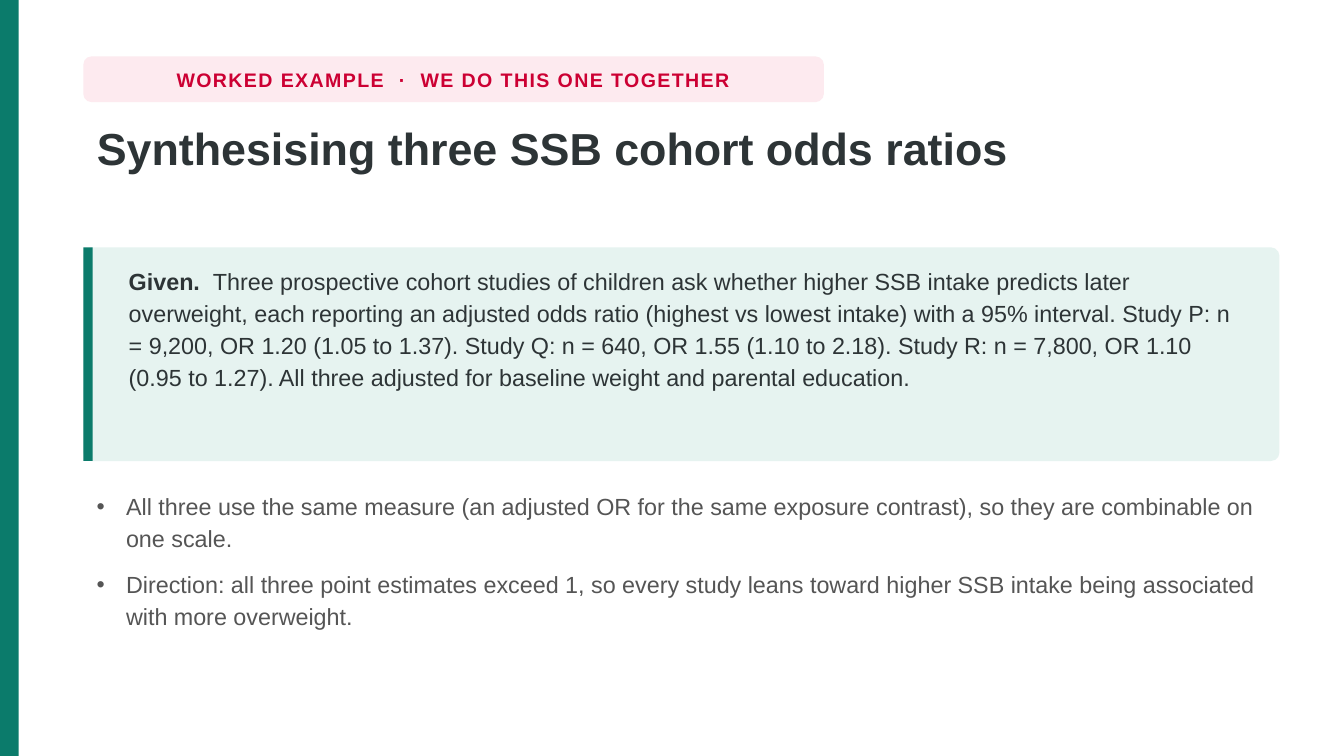
from dataclasses import dataclass

from lxml import etree
from pptx import Presentation
from pptx.dml.color import RGBColor
from pptx.enum.shapes import MSO_SHAPE as Shape
from pptx.enum.text import MSO_ANCHOR as Anchor, MSO_AUTO_SIZE as AutoSize, PP_ALIGN as Align
from pptx.oxml.ns import qn
from pptx.util import Inches, Pt


@dataclass(frozen=True)
class Theme:
    font: str = "Arial"
    green: str = "0B7B6B"
    mint: str = "E6F3F0"
    pink: str = "FDEAEF"
    red: str = "CC0033"
    ink: str = "2D3436"
    grey: str = "555555"
    label_size: float = 10.5
    title_size: float = 24
    body_size: float = 12.5


theme = Theme()
prs = Presentation()
prs.slide_width = Inches(10)
prs.slide_height = prs.slide_width * 9 // 16
slide = prs.slides.add_slide(prs.slide_layouts[5])
left, width = Inches(0.62), Inches(8.9)
panel_top, panel_height = Inches(1.84), Inches(1.59)


def add_block(kind, x, y, w, h, color, radius=None):
    block = slide.shapes.add_shape(kind, x, y, w, h)
    block.shadow.inherit = False
    block.fill.solid()
    block.fill.fore_color.rgb = RGBColor.from_string(color)
    block.line.fill.background()
    if radius is not None:
        block.adjustments[0] = radius
    return block


def style(paragraph, size, color, bold=False, spacing=1.0, align=Align.LEFT):
    paragraph.alignment = align
    paragraph.line_spacing = spacing
    for run in paragraph.runs:
        run.font.name = theme.font
        run.font.size = Pt(size)
        run.font.bold = bold
        run.font.color.rgb = RGBColor.from_string(color)


add_block(Shape.RECTANGLE, 0, 0, Inches(0.14), prs.slide_height, theme.green)

label = add_block(Shape.ROUNDED_RECTANGLE, left, Inches(0.42), Inches(5.51), Inches(0.34),
                  theme.pink, 0.18)
label.text_frame.text = "WORKED EXAMPLE  ·  WE DO THIS ONE TOGETHER"
label.text_frame.word_wrap = False
label.text_frame.vertical_anchor = Anchor.MIDDLE
label_line = label.text_frame.paragraphs[0]
style(label_line, theme.label_size, theme.red, bold=True, align=Align.CENTER)
label_line.runs[0].font._element.set("spc", "80")

title = slide.shapes.title
title.left, title.top, title.width, title.height = left, Inches(0.84), width, Inches(1.02)
title.text_frame.text = "Synthesising three SSB cohort odds ratios"
title.text_frame.auto_size = AutoSize.NONE
title.text_frame.vertical_anchor = Anchor.TOP
style(title.text_frame.paragraphs[0], theme.title_size, theme.ink, bold=True, spacing=1.02)

add_block(Shape.ROUNDED_RECTANGLE, left, panel_top, width, panel_height, theme.mint, 0.04)
add_block(Shape.RECTANGLE, left, panel_top, Inches(0.07), panel_height, theme.green)
given = slide.shapes.add_textbox(Inches(0.86), Inches(1.91), Inches(8.4), Inches(1.45))
given.text_frame.word_wrap = True
given_text = given.text_frame.paragraphs[0]
given_text.text = "Given.  "
given_text.add_run().text = (
    "Three prospective cohort studies of children ask whether higher SSB intake predicts later "
    "overweight, each reporting an adjusted odds ratio (highest vs lowest intake) with a 95% "
    "interval. Study P: n = 9,200, OR 1.20 (1.05 to 1.37). Study Q: n = 640, OR 1.55 (1.10 to "
    "2.18). Study R: n = 7,800, OR 1.10 (0.95 to 1.27). All three adjusted for baseline weight "
    "and parental education."
)
style(given_text, theme.body_size, theme.ink, spacing=1.14)
given_text.runs[0].font.bold = True

observations = [
    "All three use the same measure (an adjusted OR for the same exposure contrast), so they are "
    "combinable on one scale.",
    "Direction: all three point estimates exceed 1, so every study leans toward higher SSB intake "
    "being associated with more overweight.",
]
for index, observation in enumerate(observations):
    point = slide.shapes.add_textbox(left, Inches(3.59 + 0.58 * index), width, Inches(0.49))
    point.text_frame.word_wrap = True
    point.text_frame.text = observation
    point_text = point.text_frame.paragraphs[0]
    style(point_text, theme.body_size, theme.grey, spacing=1.12)
    properties = point_text._p.get_or_add_pPr()
    properties.set("marL", str(Inches(0.22)))
    properties.set("indent", str(-Inches(0.22)))
    etree.SubElement(properties, qn("a:buSzPct")).set("val", "100000")
    etree.SubElement(properties, qn("a:buFont")).set("typeface", theme.font)
    etree.SubElement(properties, qn("a:buChar")).set("char", "•")

prs.save("out.pptx")
